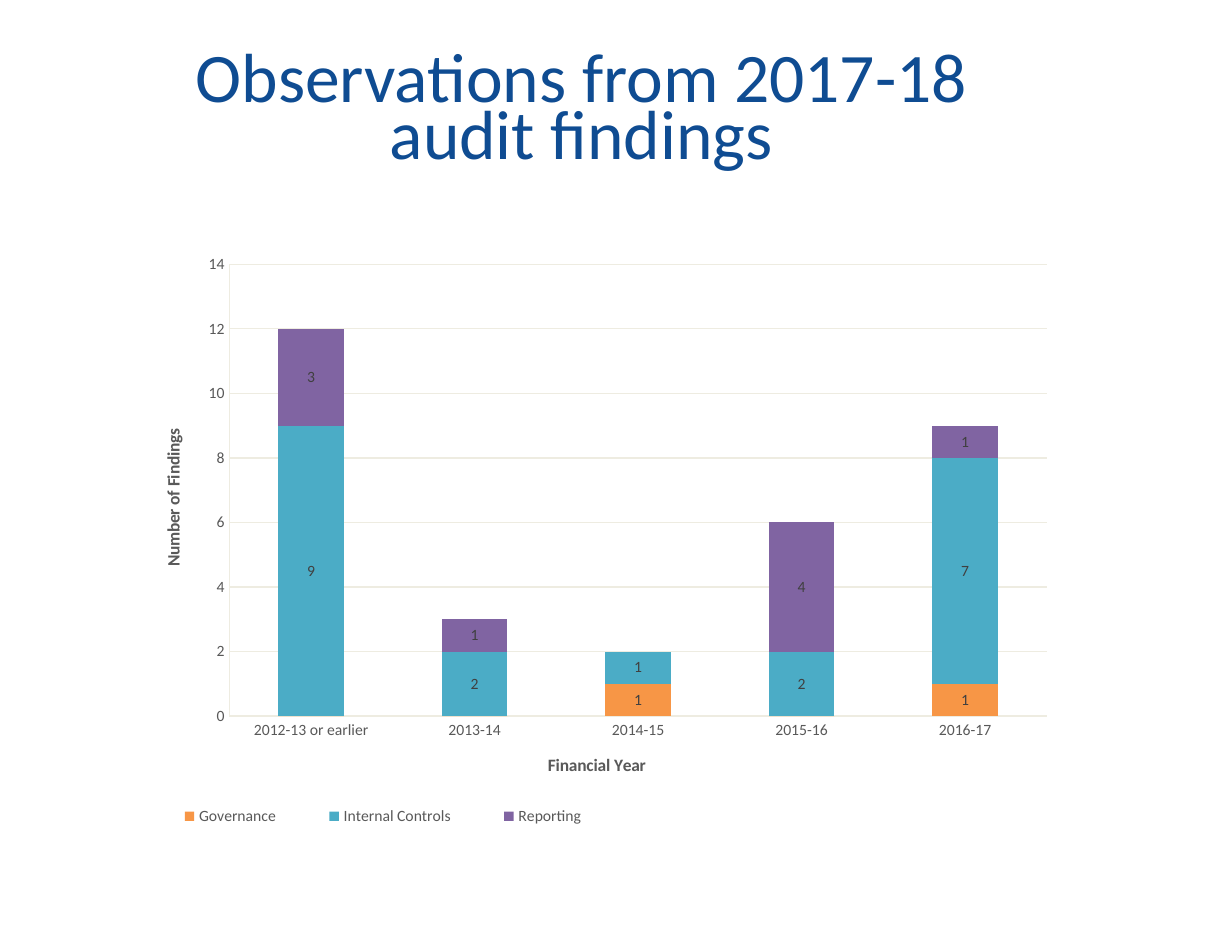
from lxml import etree
from pptx import Presentation
from pptx.chart.data import CategoryChartData
from pptx.dml.color import RGBColor
from pptx.enum.chart import XL_CHART_TYPE, XL_LABEL_POSITION, XL_LEGEND_POSITION, XL_TICK_MARK
from pptx.enum.text import PP_ALIGN
from pptx.oxml.ns import qn
from pptx.util import Cm, Inches, Pt

STACKED = XL_CHART_TYPE.COLUMN_STACKED
LABEL_CENTER = XL_LABEL_POSITION.CENTER
LEGEND_BOTTOM = XL_LEGEND_POSITION.BOTTOM
NO_TICK = XL_TICK_MARK.NONE
CENTER = PP_ALIGN.CENTER

FONT = "Calibri"
COLORS = {
    "title": "0F4C92",
    "axis": "595959",
    "label": "404040",
    "grid": "EEECE1",
    "Governance": "F79646",
    "Internal Controls": "4BACC6",
    "Reporting": "8064A2",
}
YEARS = ["2012-13 or earlier", "2013-14", "2014-15", "2015-16", "2016-17"]
FINDINGS = {
    "Governance": [0, 0, 1, 0, 1],
    "Internal Controls": [9, 2, 1, 2, 7],
    "Reporting": [3, 1, 0, 4, 1],
}
HIDE_ZERO = "0;;"


def rgb(name):
    return RGBColor.from_string(COLORS[name])


def style_font(font, size, color, bold=False):
    font.name = FONT
    font.size = Pt(size)
    font.bold = bold
    font.color.rgb = rgb(color)


def place(part, x, y, w=None, h=None):
    """Fix a chart part at percentages of the chart's size."""
    for old in part.findall(qn("c:layout")):
        part.remove(old)
    layout = etree.Element(qn("c:layout"))
    manual = etree.SubElement(layout, qn("c:manualLayout"))
    settings = {"xMode": "edge", "yMode": "edge"}
    if part.tag == qn("c:plotArea"):
        settings = {"layoutTarget": "inner", **settings}
    for key, percent in zip("xywh", (x, y, w, h)):
        if percent is not None:
            settings[key] = percent / 100
    for key, value in settings.items():
        etree.SubElement(manual, qn("c:" + key)).set("val", str(value))
    overlay = part.find(qn("c:overlay"))
    if overlay is None:
        part.insert(0, layout)
    else:
        overlay.addprevious(layout)


def add_title(slide, left, top, width, height):
    frame = slide.shapes.add_textbox(left, top, width, height).text_frame
    frame.word_wrap = True
    heading = frame.paragraphs[0]
    heading.text = "Observations from 2017-18\vaudit findings"
    heading.alignment = CENTER
    heading.line_spacing = Pt(33.1)
    heading.space_after = Pt(14.8)
    style_font(heading.font, 40, "title")


def style_axis(axis, title, x, y):
    axis.major_tick_mark = axis.minor_tick_mark = NO_TICK
    style_font(axis.tick_labels.font, 9, "axis")
    frame = axis.axis_title.text_frame
    frame.text = title
    style_font(frame.paragraphs[0].font, 10, "axis", bold=True)
    place(axis.axis_title._element, x, y)


def style_series(series):
    series.format.fill.solid()
    series.format.fill.fore_color.rgb = rgb(series.name)
    labels = series.data_labels
    labels.show_value = True
    labels.position = LABEL_CENTER
    labels.number_format = HIDE_ZERO
    labels.number_format_is_linked = False
    style_font(labels.font, 9, "label")


def add_findings_chart(slide, left, top, width, height):
    data = CategoryChartData(number_format="General")
    data.categories = YEARS
    for name, counts in FINDINGS.items():
        data.add_series(name, counts)
    chart = slide.shapes.add_chart(STACKED, left, top, width, height, data).chart
    chart.has_title = False
    chart.font.name = FONT
    chart.font.size = Pt(10)

    years, counts = chart.category_axis, chart.value_axis
    style_axis(years, "Financial Year", 43.9, 84.7)
    style_axis(counts, "Number of Findings", 2.4, 30.5)
    years.format.line.fill.background()
    counts.minimum_scale, counts.maximum_scale, counts.major_unit = 0, 14, 2
    for line in (counts.format.line, counts.major_gridlines.format.line):
        line.color.rgb = rgb("grid")
        line.width = Pt(0.75)

    plot = chart.plots[0]
    plot.gap_width = 150
    plot.overlap = 100
    plot.vary_by_categories = False
    for series in plot.series:
        style_series(series)
    place(chart._chartSpace.chart.plotArea, 10, 3.6, 87.9, 75.4)

    chart.has_legend = True
    chart.legend.position = LEGEND_BOTTOM
    chart.legend.include_in_layout = False
    style_font(chart.legend.font, 9, "axis")
    place(chart.legend._element, 0, 93, 53, 5.4)


def main():
    prs = Presentation()
    prs.slide_width, prs.slide_height = Cm(25), Cm(19)
    slide = prs.slides.add_slide(prs.slide_layouts[6])
    add_title(slide, Inches(0.67), Inches(0.42), Inches(7.95), Inches(1.7))
    add_findings_chart(slide, Inches(1.09), Inches(1.94), Inches(7.43), Inches(4.79))
    prs.save("out.pptx")


if __name__ == "__main__":
    main()
